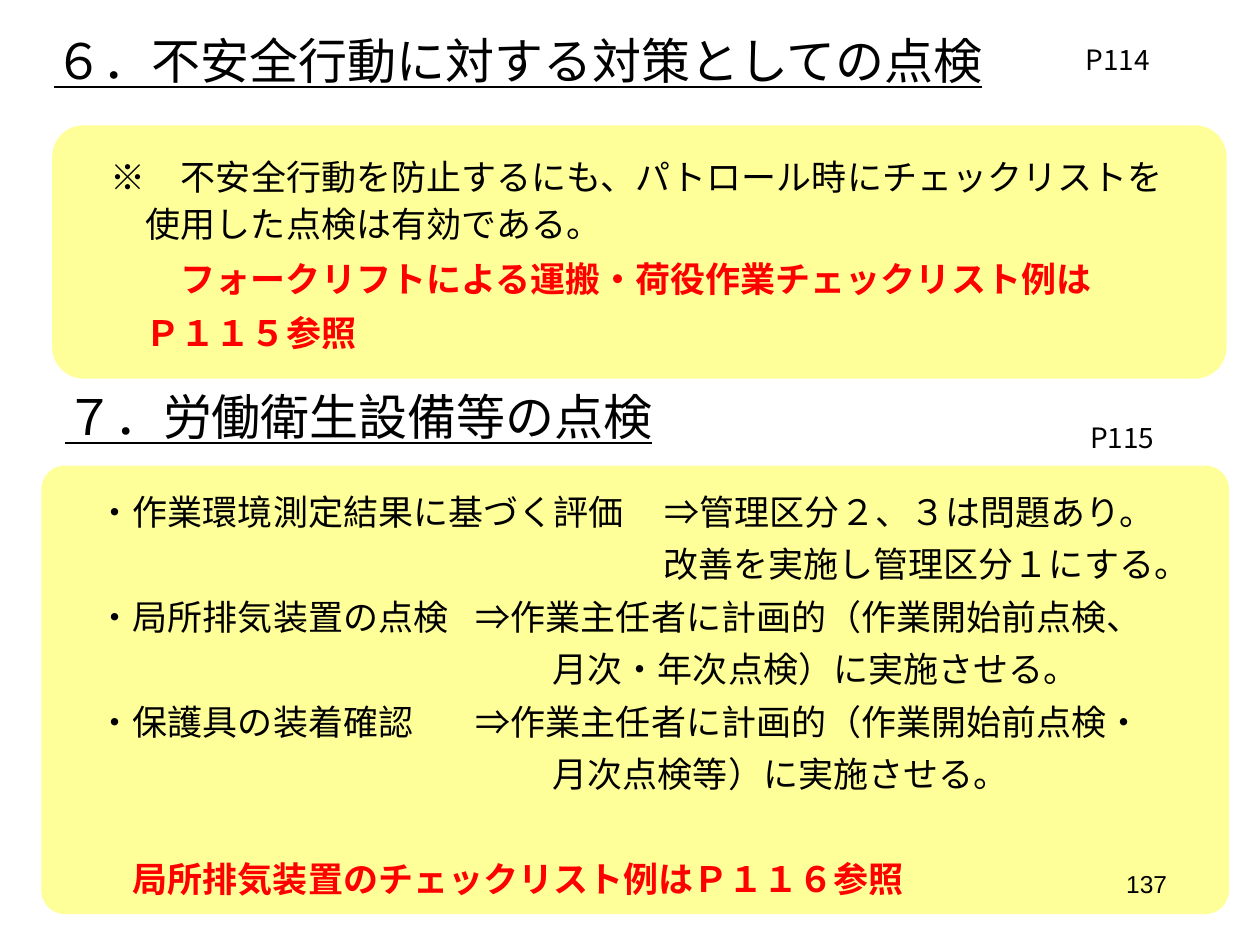
"""Build a slide on safety checks with two headed panels."""
from lxml import etree
from pptx import Presentation
from pptx.dml.color import RGBColor
from pptx.enum.shapes import MSO_SHAPE
from pptx.enum.text import MSO_ANCHOR, PP_ALIGN
from pptx.oxml.ns import qn
from pptx.util import Pt

ROUND = MSO_SHAPE.ROUNDED_RECTANGLE
TOP, MIDDLE = MSO_ANCHOR.TOP, MSO_ANCHOR.MIDDLE
LEFT, MID, RIGHT = PP_ALIGN.LEFT, PP_ALIGN.CENTER, PP_ALIGN.RIGHT
BLACK = RGBColor(0, 0, 0)
RED = RGBColor(255, 0, 0)
CREAM = RGBColor(255, 255, 153)
GOTHIC, SANS = "Noto Sans CJK JP", "Arial"

# text, indent, tab, line pitch, space before, colour
CHECKS = [
    ("・作業環境測定結果に基づく評価\t⇒管理区分２、３は問題あり。", 0, 309, 30, 0, BLACK),
    ("改善を実施し管理区分１にする。", 323, 0, 30, 0, BLACK),
    ("・局所排気装置の点検\t⇒作業主任者に計画的（作業開始前点検、", 0, 240, 30, 0, BLACK),
    ("月次・年次点検）に実施させる。", 260, 0, 30, 0, BLACK),
    ("・保護具の装着確認\t⇒作業主任者に計画的（作業開始前点検・", 0, 240, 30, 0, BLACK),
    ("月次点検等）に実施させる。", 260, 0, 30, 0, BLACK),
    ("局所排気装置のチェックリスト例はＰ１１６参照", 20, 0, 30, 30, RED),
]
UNSAFE = [
    ("※　不安全行動を防止するにも、パトロール時にチェックリストを", 0, 0, 27, 0, BLACK),
    ("使用した点検は有効である。", 20, 0, 27, 0, BLACK),
    ("フォークリフトによる運搬・荷役作業チェックリスト例は", 40, 0, 31, 0, RED),
    ("Ｐ１１５参照", 20, 0, 31, 0, RED),
]
PANELS = [
    ((24, 266.4, 678, 255.6), 0.052, CHECKS),
    ((30.2, 72, 670.3, 144), 0.122, UNSAFE),
]
# text, box, size, font, alignment, underline
LABELS = [
    ("６．不安全行動に対する対策としての点検", (23.8, 14, 569, 48), 28, GOTHIC, LEFT, True),
    ("P114", (575.3, 21, 126.7, 30.4), 16, GOTHIC, MID, False),
    ("７．労働衛生設備等の点検", (30.2, 217.5, 402, 48), 28, GOTHIC, LEFT, True),
    ("P115", (570.2, 237, 96.5, 30.4), 16, GOTHIC, RIGHT, False),
    ("137", (612, 493, 62, 30), 14, SANS, RIGHT, False),
]


def write(para, text, size, font, color):
    run = para.add_run()
    run.text = text
    run.font.size = Pt(size)
    run.font.name = font
    run.font.color.rgb = color
    east = etree.SubElement(run.font._element, qn("a:ea"))
    east.set("typeface", font)
    return run


def indent(para, left, tab):
    props = para._p.get_or_add_pPr()
    props.set("marL", str(Pt(left)))
    props.set("indent", "0")
    if tab:
        stops = etree.SubElement(props, qn("a:tabLst"))
        etree.SubElement(stops, qn("a:tab"), pos=str(Pt(tab)), algn="l")


def add_panel(slide, box, bend, lines):
    shape = slide.shapes.add_shape(ROUND, *map(Pt, box))
    shape.adjustments[0] = bend
    shape.shadow.inherit = False
    shape.fill.solid()
    shape.fill.fore_color.rgb = CREAM
    shape.line.color.rgb = CREAM
    shape.line.width = Pt(0.75)
    frame = shape.text_frame
    frame.word_wrap = True
    frame.vertical_anchor = MIDDLE
    frame.margin_left, frame.margin_right = Pt(28), 0
    for i, (text, left, tab, pitch, gap, color) in enumerate(lines):
        para = frame.add_paragraph() if i else frame.paragraphs[0]
        indent(para, left, tab)
        para.alignment = LEFT
        para.line_spacing = Pt(pitch)
        if gap:
            para.space_before = Pt(gap)
        run = write(para, text, 20, GOTHIC, color)
        run.font.bold = color == RED


def add_label(slide, text, box, size, font, align, under):
    frame = slide.shapes.add_textbox(*map(Pt, box)).text_frame
    frame.word_wrap = True
    frame.vertical_anchor = TOP
    para = frame.paragraphs[0]
    para.alignment = align
    write(para, text, size, font, BLACK).font.underline = under


def main():
    deck = Presentation()
    deck.slide_width, deck.slide_height = Pt(720), Pt(540)
    slide = deck.slides.add_slide(deck.slide_layouts[6])
    for panel in PANELS:
        add_panel(slide, *panel)
    for label in LABELS:
        add_label(slide, *label)
    deck.save("out.pptx")


if __name__ == "__main__":
    main()
